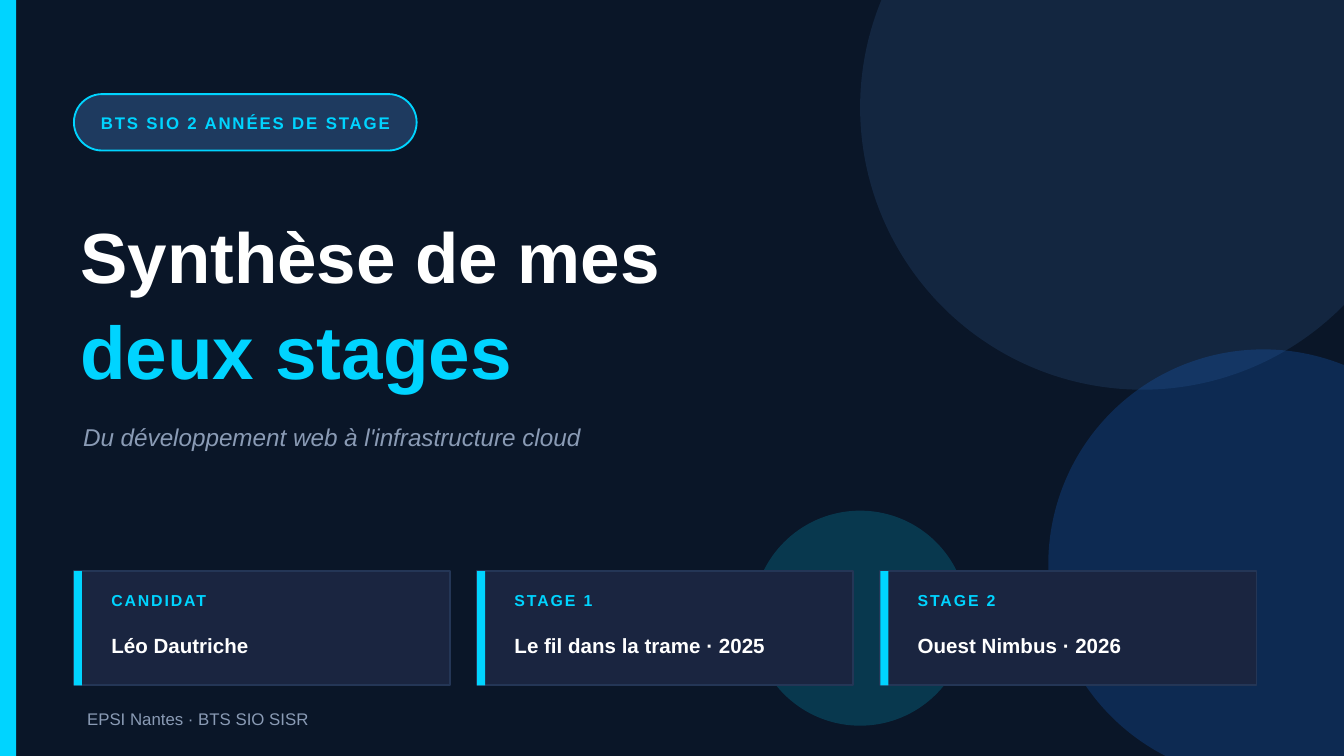
"""Build the title slide of an internship summary."""
from dataclasses import dataclass

from pptx import Presentation
from pptx.dml.color import RGBColor
from pptx.enum.shapes import MSO_SHAPE
from pptx.enum.text import MSO_ANCHOR, PP_ALIGN
from pptx.oxml.ns import qn
from pptx.shapes.autoshape import Shape
from pptx.slide import Slide
from pptx.util import Emu, Pt
from lxml.etree import SubElement

PX_PER_INCH = 200
EMU_PER_PX = 914400 // PX_PER_INCH
WIDTH, HEIGHT = 2000, 1125

NIGHT, NAVY, BLUE, CYAN = "0A1628", "1E3A5F", "1A73E8", "00D4FF"
PANEL, PANEL_EDGE, WHITE, GREY = "1A2540", "243656", "FFFFFF", "8A9BB5"

MARGIN = 110
CARD_TOP, CARD_WIDTH, CARD_HEIGHT, CARD_GAP = 850, 560, 170, 40


@dataclass(frozen=True)
class Box:
    left: int
    top: int
    width: int
    height: int

    def emu(self) -> list[Emu]:
        return [Emu(v * EMU_PER_PX) for v in (self.left, self.top, self.width, self.height)]


@dataclass(frozen=True)
class Circle:
    left: int
    top: int
    diameter: int
    color: str
    opacity: int


@dataclass(frozen=True)
class Label:
    text: str
    box: Box
    size: float
    color: str
    bold: bool = False
    italic: bool = False
    spacing: int = 0
    align: PP_ALIGN = PP_ALIGN.LEFT


@dataclass(frozen=True)
class Card:
    heading: str
    value: str


CIRCLES = [
    Circle(1280, -260, 840, NAVY, 45),
    Circle(1560, 520, 640, BLUE, 22),
    Circle(1120, 760, 320, CYAN, 18),
]
BADGE = Box(MARGIN, 140, 510, 84)
LABELS = [
    Label("BTS SIO 2 ANNÉES DE STAGE", BADGE, 9, CYAN, bold=True, spacing=1,
          align=PP_ALIGN.CENTER),
    Label("Synthèse de mes", Box(100, 310, 1400, 140), 38, WHITE, bold=True),
    Label("deux stages", Box(100, 440, 1400, 160), 40, CYAN, bold=True),
    Label("Du développement web à l'infrastructure cloud", Box(104, 610, 1500, 80), 13, GREY,
          italic=True),
    Label("EPSI Nantes · BTS SIO SISR", Box(MARGIN, 1040, 1200, 60), 9, GREY),
]
CARDS = [
    Card("CANDIDAT", "Léo Dautriche"),
    Card("STAGE 1", "Le fil dans la trame · 2025"),
    Card("STAGE 2", "Ouest Nimbus · 2026"),
]


def rgb(color: str) -> RGBColor:
    return RGBColor.from_string(color)


def draw_shape(slide: Slide, kind: MSO_SHAPE, box: Box, fill: str, edge: str = "") -> Shape:
    shape = slide.shapes.add_shape(kind, *box.emu())
    shape.shadow.inherit = False
    shape.fill.solid()
    shape.fill.fore_color.rgb = rgb(fill)
    if edge:
        shape.line.color.rgb = rgb(edge)
        shape.line.width = Pt(1)
    else:
        shape.line.fill.background()
    return shape


def draw_circle(slide: Slide, circle: Circle) -> None:
    box = Box(circle.left, circle.top, circle.diameter, circle.diameter)
    disc = draw_shape(slide, MSO_SHAPE.OVAL, box, circle.color)
    tint = disc.element.spPr.find(qn("a:solidFill")).find(qn("a:srgbClr"))
    SubElement(tint, qn("a:alpha")).set("val", str(circle.opacity * 1000))


def draw_label(slide: Slide, label: Label) -> None:
    frame = slide.shapes.add_textbox(*label.box.emu()).text_frame
    frame.word_wrap = True
    frame.vertical_anchor = MSO_ANCHOR.MIDDLE
    paragraph = frame.paragraphs[0]
    paragraph.alignment = label.align
    run = paragraph.add_run()
    run.text = label.text
    run.font.name = "Arial"
    run.font.size = Pt(label.size)
    run.font.bold = label.bold
    run.font.italic = label.italic
    run.font.color.rgb = rgb(label.color)
    if label.spacing:
        run._r.get_or_add_rPr().set("spc", str(label.spacing * 100))


def draw_card(slide: Slide, card: Card, left: int) -> None:
    draw_shape(slide, MSO_SHAPE.RECTANGLE, Box(left, CARD_TOP, CARD_WIDTH, CARD_HEIGHT),
               PANEL, PANEL_EDGE)
    draw_shape(slide, MSO_SHAPE.RECTANGLE, Box(left, CARD_TOP, 12, CARD_HEIGHT), CYAN)
    text_left = left + 36
    draw_label(slide, Label(card.heading, Box(text_left, CARD_TOP + 18, 500, 50), 8.5, CYAN,
                            bold=True, spacing=1))
    draw_label(slide, Label(card.value, Box(text_left, CARD_TOP + 70, 500, 80), 11, WHITE,
                            bold=True))


def main() -> None:
    deck = Presentation()
    deck.slide_width = Emu(WIDTH * EMU_PER_PX)
    deck.slide_height = Emu(HEIGHT * EMU_PER_PX)
    slide = deck.slides.add_slide(deck.slide_layouts[6])
    slide.background.fill.solid()
    slide.background.fill.fore_color.rgb = rgb(NIGHT)

    for circle in CIRCLES:
        draw_circle(slide, circle)
    draw_shape(slide, MSO_SHAPE.RECTANGLE, Box(0, 0, 24, HEIGHT), CYAN)
    badge = draw_shape(slide, MSO_SHAPE.ROUNDED_RECTANGLE, BADGE, NAVY, CYAN)
    badge.adjustments[0] = 0.5
    for label in LABELS:
        draw_label(slide, label)
    for index, card in enumerate(CARDS):
        draw_card(slide, card, MARGIN + index * (CARD_WIDTH + CARD_GAP))
    deck.save("out.pptx")


if __name__ == "__main__":
    main()
